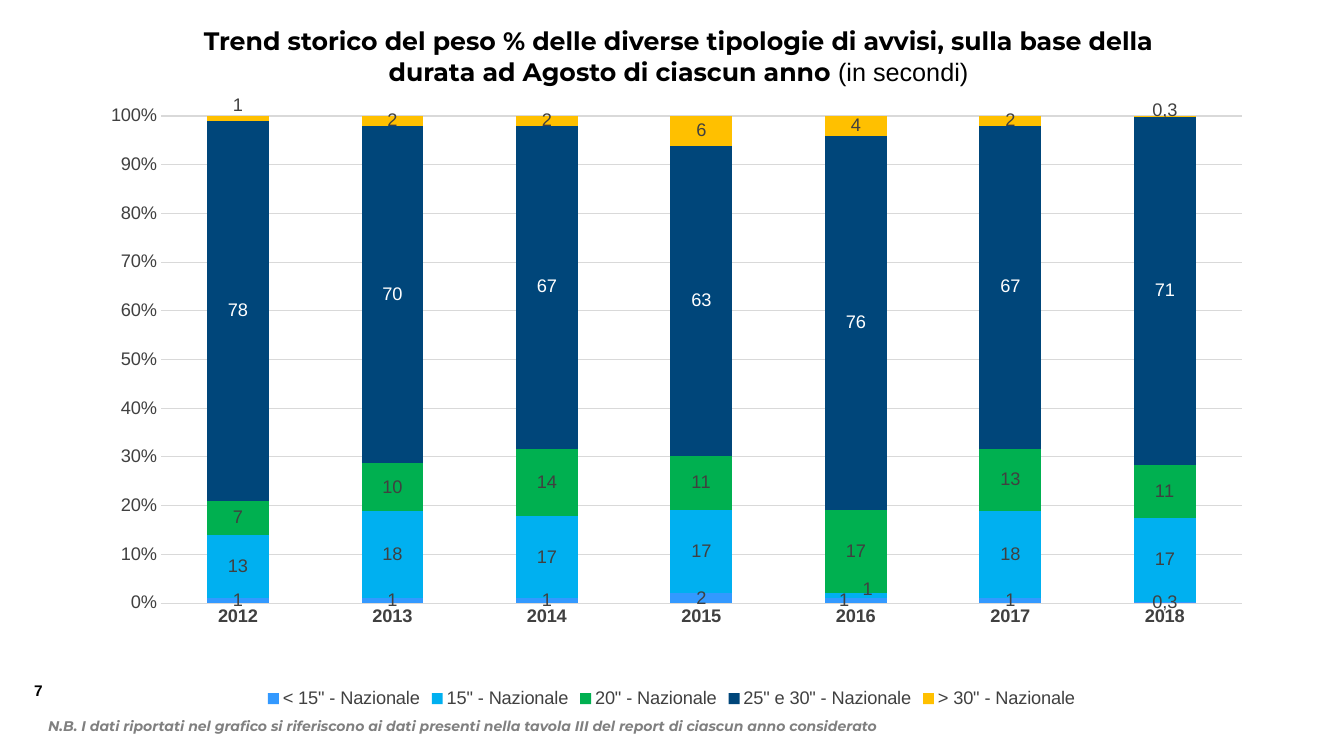
from lxml import etree
from pptx import Presentation
from pptx import util as u
from pptx.chart.data import CategoryChartData
from pptx.dml.color import RGBColor
from pptx.enum import chart as ch, shapes, text
from pptx.oxml.ns import qn

# Content
PAGE = "7"
TITLE = ("Trend storico del peso % delle diverse tipologie di avvisi, "
         "sulla base della durata ad Agosto di ciascun anno ")
UNIT = "(in secondi)"
NOTE = ("N.B. I dati riportati nel grafico si riferiscono ai dati presenti "
        "nella tavola III del report di ciascun anno considerato")
YEARS = ["2012", "2013", "2014", "2015", "2016", "2017", "2018"]
# Duration: (percentages by year, bar colour, label colour)
DURATIONS = {
    '< 15" - Nazionale': ([1, 1, 1, 2, 1, 1, 0.3], "3399FF", "404040"),
    '15" - Nazionale': ([13, 18, 17, 17, 1, 18, 17], "00B0F0", "404040"),
    '20" - Nazionale': ([7, 10, 14, 11, 17, 13, 11], "00B050", "404040"),
    '25" e 30" - Nazionale': ([78, 70, 67, 63, 76, 67, 71], "00467A", "FFFFFF"),
    '> 30" - Nazionale': ([1, 2, 2, 6, 4, 2, 0.3], "FFC000", "404040"),
}
# Labels moved off centre: (series, year) -> shift as a share of the chart
LABEL_SHIFTS = {(0, 4): (-0.01, 0), (1, 4): (0.01, -0.01),
                (4, 0): (0, -0.02), (4, 6): (0, -0.01)}
PLOT_AREA = {"layoutTarget": "inner", "xMode": "edge", "yMode": "edge",
             "x": 0.064, "y": 0.062, "w": 0.923, "h": 0.766}

THEME = {
    "body": "Arial", "display": "Montserrat",
    "black": "000000", "white": "FFFFFF", "grey": "808080",
    "chart_text": "404040", "rule": "D9D9D9",
    "title_size": 18, "chart_size": 13, "page_size": 11, "note_size": 10,
}


def style(font, face, size, colour, **flags):
    formats = {"name": face, "size": u.Pt(size), "bold": False, **flags}
    for key, value in formats.items():
        setattr(font, key, value)
    font.color.rgb = RGBColor.from_string(colour)


def add_run(paragraph, words, *look, **flags):
    run = paragraph.add_run()
    run.text = words
    style(run.font, *look, **flags)


def add_text_box(slide, box):
    frame = slide.shapes.add_textbox(*map(u.Inches, box)).text_frame
    frame.word_wrap = True
    return frame.paragraphs[0]


def manual_layout(parent, index, values):
    for old in parent.findall(qn("c:layout")):
        parent.remove(old)
    layout = etree.Element(qn("c:layout"))
    manual = etree.SubElement(layout, qn("c:manualLayout"))
    for key, value in values.items():
        etree.SubElement(manual, qn(f"c:{key}")).set("val", str(value))
    parent.insert(index, layout)


def rule_line(line):
    line.color.rgb = RGBColor.from_string(THEME["rule"])
    line.width = u.Pt(0.75)


def add_title(slide):
    panel = slide.shapes.add_shape(shapes.MSO_SHAPE.RECTANGLE,
                                   *map(u.Inches, (1.55, 0.2, 10.36, 0.71)))
    panel.shadow.inherit = False
    panel.fill.solid()
    panel.fill.fore_color.rgb = RGBColor.from_string(THEME["white"])
    panel.line.fill.background()
    panel.text_frame.word_wrap = True
    heading = panel.text_frame.paragraphs[0]
    heading.alignment = text.PP_ALIGN.CENTER
    size, black = THEME["title_size"], THEME["black"]
    add_run(heading, TITLE, THEME["display"], size, black, bold=True)
    add_run(heading, UNIT, THEME["body"], size, black)


def add_trend_chart(slide):
    data = CategoryChartData(number_format="0%")
    data.categories = YEARS
    for name, (shares, _, _) in DURATIONS.items():
        data.add_series(name, [round(share / 100, 3) for share in shares])
    trend = slide.shapes.add_chart(ch.XL_CHART_TYPE.COLUMN_STACKED_100,
                                   *map(u.Inches, (0.85, 0.76, 11.62, 6.31)),
                                   data).chart
    look = THEME["body"], THEME["chart_size"], THEME["chart_text"]
    style(trend.font, *look)
    trend.has_title = False
    trend.has_legend = True
    trend.legend.position = ch.XL_LEGEND_POSITION.BOTTOM
    trend.legend.include_in_layout = False
    style(trend.legend.font, *look)

    # Axes
    years, percent = trend.category_axis, trend.value_axis
    for axis in (years, percent):
        axis.major_tick_mark = axis.minor_tick_mark = ch.XL_TICK_MARK.NONE
        style(axis.tick_labels.font, *look, bold=axis is years)
    rule_line(years.format.line)
    percent.format.line.fill.background()
    rule_line(percent.major_gridlines.format.line)
    percent.minimum_scale, percent.maximum_scale = 0, 1
    percent.major_unit = 0.1
    percent.tick_labels.number_format = "0%"
    percent.tick_labels.number_format_is_linked = False

    # Bars and their labels
    plot = trend.plots[0]
    plot.gap_width, plot.overlap = 150, 100
    plot.vary_by_categories = False
    for series, (shares, fill, ink) in zip(plot.series, DURATIONS.values()):
        series.format.fill.solid()
        series.format.fill.fore_color.rgb = RGBColor.from_string(fill)
        series.data_labels.show_value = True
        for index, share in enumerate(shares):
            label = series.points[index].data_label
            add_run(label.text_frame.paragraphs[0],
                    str(share).replace(".", ","),
                    THEME["body"], THEME["chart_size"], ink)
            label.position = ch.XL_LABEL_POSITION.CENTER

    # Placement of the plot and of the shifted labels
    manual_layout(next(trend.element.iter(qn("c:plotArea"))), 0, PLOT_AREA)
    all_series = list(trend.element.iter(qn("c:ser")))
    for (row, column), (dx, dy) in LABEL_SHIFTS.items():
        label = list(all_series[row].iter(qn("c:dLbl")))[column]
        manual_layout(label, 1, {"x": dx, "y": dy})


def main():
    deck = Presentation()
    deck.slide_width, deck.slide_height = u.Inches(13.33), u.Inches(7.5)
    slide = deck.slides.add_slide(deck.slide_layouts[6])

    # Page number, title, note and chart
    add_run(add_text_box(slide, (0.24, 6.71, 0.42, 0.29)), PAGE,
            THEME["body"], THEME["page_size"], THEME["black"], bold=True)
    add_title(slide)
    add_run(add_text_box(slide, (0.38, 7.07, 10.93, 0.27)), NOTE,
            THEME["display"], THEME["note_size"], THEME["grey"],
            bold=True, italic=True)
    add_trend_chart(slide)
    deck.save("out.pptx")


if __name__ == "__main__":
    main()
